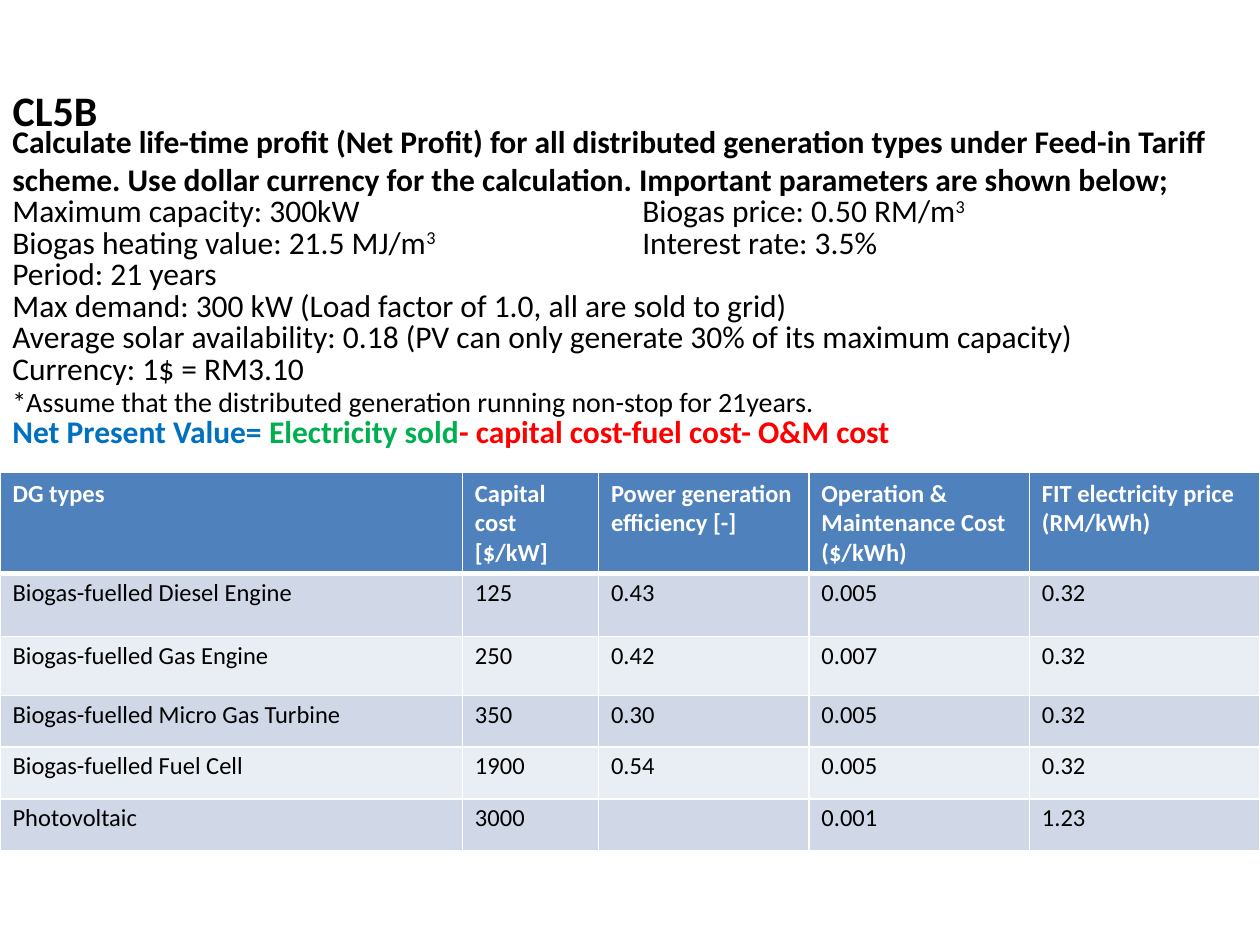
from lxml import etree
from pptx import Presentation
from pptx import util as u
from pptx.dml.color import RGBColor
from pptx.enum import text
from pptx.oxml.ns import qn

WIDTH, HEIGHT = 10, 7.5
FONT = "Calibri"
BLACK, WHITE = "000000", "FFFFFF"
HEADER_FILL, BAND_FILLS = "4F81BD", ("D0D8E8", "E9EDF4")
SECOND_COLUMN = WIDTH / 2

TITLE = "CL5B"
QUESTION = ("Calculate life-time profit (Net Profit) for all distributed generation types "
            "under Feed-in Tariff scheme. Use dollar currency for the calculation. "
            "Important parameters are shown below;")
# Each parameter line is a list of spans; "^" marks a superscript span.
PARAMETERS = [
    ["Maximum capacity: 300kW\tBiogas price: 0.50 RM/m", "^3"],
    ["Biogas heating value: 21.5 MJ/m", "^3", "\tInterest rate: 3.5%"],
    ["Period: 21 years"],
    ["Max demand: 300 kW (Load factor of 1.0, all are sold to grid)"],
    ["Average solar availability: 0.18 (PV can only generate 30% of its maximum capacity)"],
    ["Currency: 1$ = RM3.10"],
]
ASSUMPTION = "*Assume that the distributed generation running non-stop for 21years."
FORMULA = [("Net Present Value= ", "0070C0"), ("Electricity sold", "00B050"),
           ("- capital cost-fuel cost- O&M cost", "FF0000")]

TABLE = [
    ["DG types", "Capital cost [$/kW]", "Power generation efficiency [-]",
     "Operation & Maintenance Cost ($/kWh)", "FIT electricity price (RM/kWh)"],
    ["Biogas-fuelled Diesel Engine", "125", "0.43", "0.005", "0.32"],
    ["Biogas-fuelled Gas Engine", "250", "0.42", "0.007", "0.32"],
    ["Biogas-fuelled Micro Gas Turbine", "350", "0.30", "0.005", "0.32"],
    ["Biogas-fuelled Fuel Cell", "1900", "0.54", "0.005", "0.32"],
    ["Photovoltaic", "3000", "", "0.001", "1.23"],
]
COLUMN_WIDTHS = [3.67, 1.08, 1.67, 1.75, 1.83]
ROW_HEIGHTS = [0.79, 0.5, 0.47, 0.41, 0.41, 0.41]


def rgb(value):
    return RGBColor.from_string(value)


def set_values(target, **values):
    for name, value in values.items():
        setattr(target, name, value)


def add_span(para, words, size, color=BLACK, bold=False):
    span = para.add_run()
    span.text = words.removeprefix("^")
    set_values(span.font, name=FONT, size=u.Pt(size), bold=bold)
    span.font.color.rgb = rgb(color)
    if words.startswith("^"):
        span.font._element.set("baseline", "30000")


def add_tab_stop(para, inches):
    stops = etree.SubElement(para._p.get_or_add_pPr(), qn("a:tabLst"))
    etree.SubElement(stops, qn("a:tab"), pos=str(u.Inches(inches)), algn="l")


def add_border(cell, side, points):
    line = etree.SubElement(cell._tc.get_or_add_tcPr(), qn(f"a:ln{side}"),
                            w=str(u.Pt(points)))
    fill = etree.SubElement(line, qn("a:solidFill"))
    etree.SubElement(fill, qn("a:srgbClr"), val=WHITE)


def add_title(slide):
    title = slide.shapes.title
    set_values(title, left=0, top=u.Inches(0.62), width=u.Inches(WIDTH), height=u.Inches(0.5))
    frame = title.text_frame
    set_values(frame, word_wrap=True, vertical_anchor=text.MSO_ANCHOR.MIDDLE,
               auto_size=text.MSO_AUTO_SIZE.NONE)
    para = frame.paragraphs[0]
    para.alignment = text.PP_ALIGN.LEFT
    add_span(para, TITLE, 24, bold=True)


def add_problem(slide):
    box = slide.shapes.add_textbox(0, u.Inches(0.92), u.Inches(WIDTH), u.Inches(3.33))
    frame = box.text_frame
    set_values(frame, word_wrap=True, vertical_anchor=text.MSO_ANCHOR.TOP)
    add_span(frame.paragraphs[0], QUESTION, 18, bold=True)

    lines = [[(words, 18) for words in spans] for spans in PARAMETERS]
    lines.append([(ASSUMPTION, 16)])
    lines.append([(words, 18, color, True) for words, color in FORMULA])
    for spans in lines:
        para = frame.add_paragraph()
        if any("\t" in span[0] for span in spans):
            add_tab_stop(para, SECOND_COLUMN)
        para.line_spacing = u.Pt(18)
        for span in spans:
            add_span(para, *span)


def add_cost_table(slide):
    table = slide.shapes.add_table(
        len(TABLE), len(COLUMN_WIDTHS), 0, u.Inches(HEIGHT / 2),
        u.Inches(WIDTH), u.Inches(sum(ROW_HEIGHTS))).table
    for column, width in zip(table.columns, COLUMN_WIDTHS):
        column.width = u.Inches(width)
    for row, height in zip(table.rows, ROW_HEIGHTS):
        row.height = u.Inches(height)

    for r, values in enumerate(TABLE):
        header = r == 0
        for c, value in enumerate(values):
            cell = table.cell(r, c)
            for side in "LRTB":
                thick = (header and side == "B") or (r == 1 and side == "T")
                add_border(cell, side, 3 if thick else 1)
            cell.fill.solid()
            cell.fill.fore_color.rgb = rgb(HEADER_FILL if header else BAND_FILLS[(r - 1) % 2])
            para = cell.text_frame.paragraphs[0]
            if not header:
                para.line_spacing = u.Pt(16)
            if value:
                add_span(para, value, 14, WHITE if header else BLACK, header)


def main():
    deck = Presentation()
    set_values(deck, slide_width=u.Inches(WIDTH), slide_height=u.Inches(HEIGHT))
    slide = deck.slides.add_slide(deck.slide_layouts.get_by_name("Title Only"))
    add_title(slide)
    add_problem(slide)
    add_cost_table(slide)
    deck.save("out.pptx")


if __name__ == "__main__":
    main()
